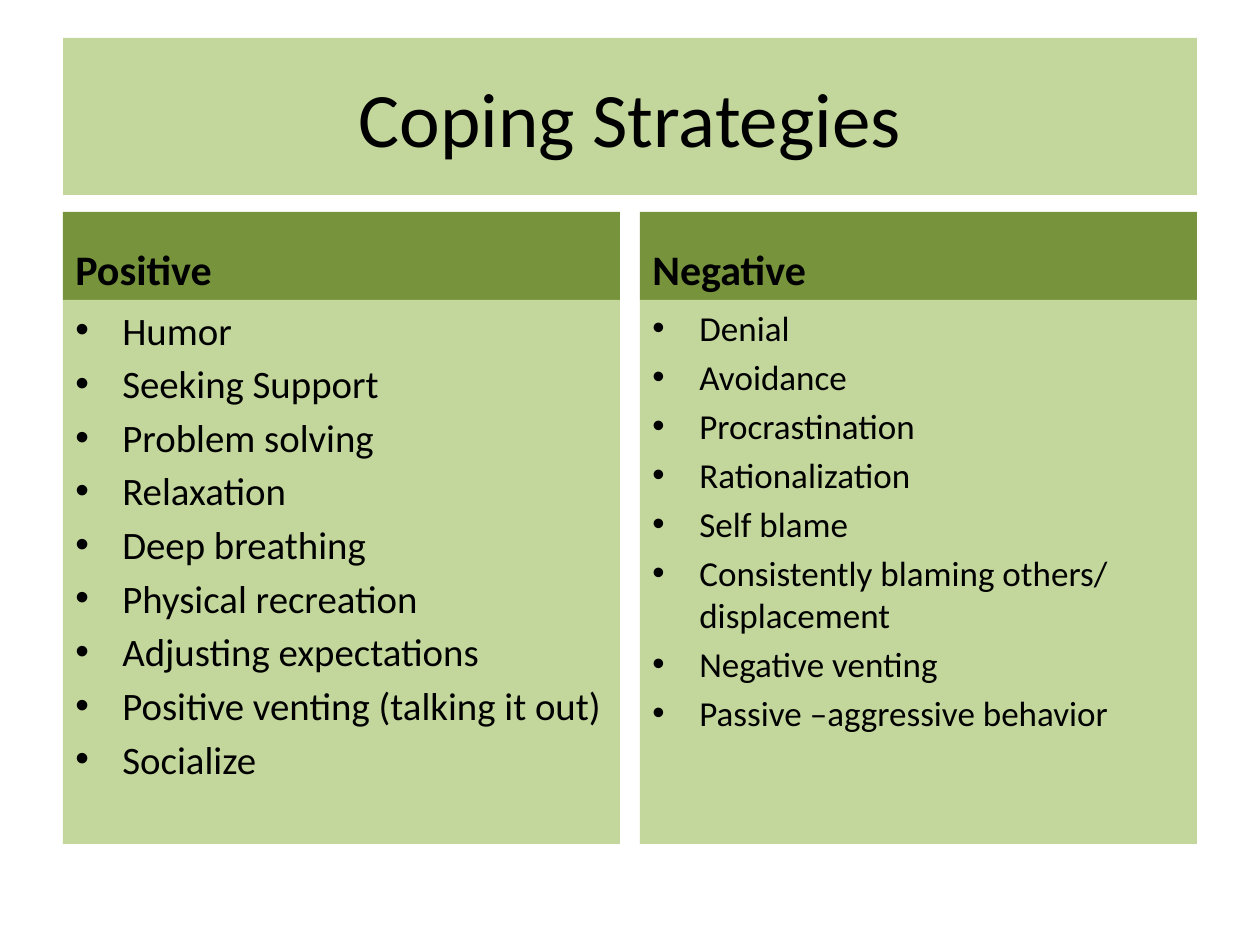
"""Build the coping strategies slide: a title over two bulleted columns."""
from dataclasses import dataclass

from lxml import etree
from pptx import Presentation
from pptx import util as u
from pptx.dml.color import RGBColor
from pptx.enum import text
from pptx.oxml.ns import qn

LIGHT, DARK, INK = "C3D69B", "77933C", "000000"
LEFT, WIDE, GAP = 63, 557, 20
HEAD_TOP, HEAD_TALL, BODY_TALL = 212, 88, 544
INDENT = 47


@dataclass
class Column:
    """A heading with its bulleted items and their text size."""
    head: str
    items: list[str]
    size: float


COLUMNS = [
    Column("Positive", [
        "Humor", "Seeking Support", "Problem solving", "Relaxation",
        "Deep breathing", "Physical recreation", "Adjusting expectations",
        "Positive venting (talking it out)", "Socialize"], 22.2),
    Column("Negative", [
        "Denial", "Avoidance", "Procrastination", "Rationalization",
        "Self blame", "Consistently blaming others/ displacement",
        "Negative venting", "Passive –aggressive behavior"], 20),
]


def px(n: int) -> int:
    """Turn pixels into EMU."""
    return u.Inches(n / 126)


def paint(fill, tone: str) -> None:
    """Give a solid fill the colour of a hex string."""
    fill.solid()
    fill.fore_color.rgb = RGBColor.from_string(tone)


def style(para, size: float, bold: bool = False) -> None:
    """Format the runs of a paragraph."""
    for run in para.runs:
        run.font.name = "Calibri"
        run.font.size = u.Pt(size)
        run.font.bold = bold
        paint(run.font.fill, INK)


def panel(slide, x: int, y: int, tall: int, tone: str, words: str):
    """Draw a filled text box of column width and return its frame."""
    box = slide.shapes.add_textbox(px(x), px(y), px(WIDE), px(tall))
    paint(box.fill, tone)
    frame = box.text_frame
    frame.word_wrap = True
    frame.text = words
    return frame


def bullet(para) -> None:
    """Add a hanging bullet to a paragraph."""
    props = para._p.get_or_add_pPr()
    props.set("marL", str(px(INDENT)))
    props.set("indent", str(-px(INDENT)))
    etree.SubElement(props, qn("a:buFont"), typeface="Arial")
    etree.SubElement(props, qn("a:buChar"), char="•")


def draw(slide, col: Column, x: int) -> None:
    """Draw one column: its heading and its list."""
    head = panel(slide, x, HEAD_TOP, HEAD_TALL, DARK, col.head)
    head.vertical_anchor = text.MSO_ANCHOR.BOTTOM
    style(head.paragraphs[0], 24, True)
    body = panel(slide, x, HEAD_TOP + HEAD_TALL, BODY_TALL, LIGHT,
                 "\n".join(col.items))
    for i, para in enumerate(body.paragraphs):
        bullet(para)
        para.space_before = u.Pt(4 if i else 0)
        style(para, col.size)


def main() -> None:
    """Make and save the slide."""
    deck = Presentation()
    deck.slide_width, deck.slide_height = u.Inches(10), u.Inches(7.5)
    slide = deck.slides.add_slide(deck.slide_layouts[5])
    title = slide.shapes.title
    title.left, title.top = px(LEFT), px(38)
    title.width, title.height = px(2 * WIDE + GAP), px(157)
    paint(title.fill, LIGHT)
    title.text_frame.text = "Coping Strategies"
    title.text_frame.vertical_anchor = text.MSO_ANCHOR.MIDDLE
    title.text_frame.paragraphs[0].alignment = text.PP_ALIGN.CENTER
    style(title.text_frame.paragraphs[0], 44)
    for i, col in enumerate(COLUMNS):
        draw(slide, col, LEFT + i * (WIDE + GAP))
    deck.save("out.pptx")


if __name__ == "__main__":
    main()
